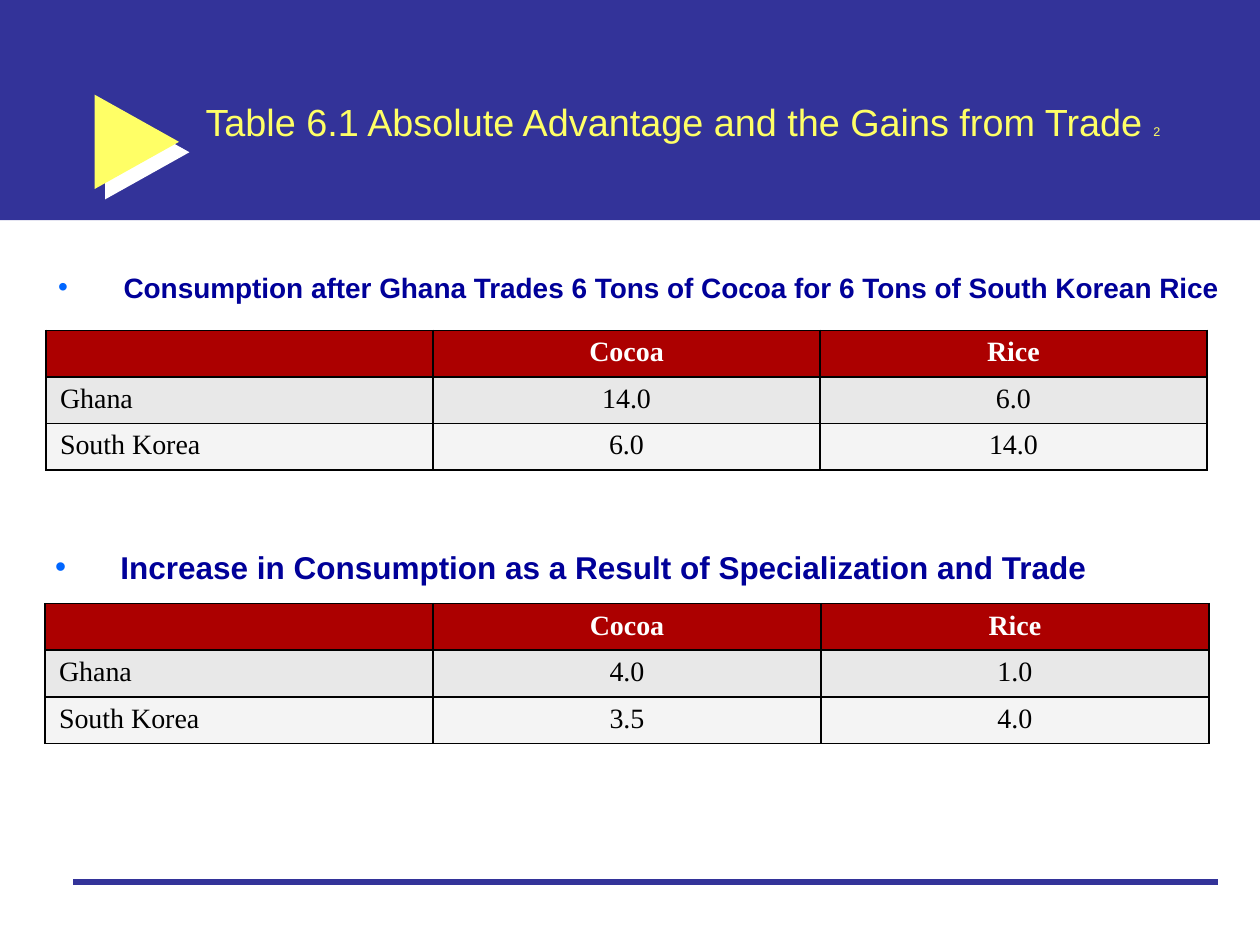
from lxml import etree
from pptx import Presentation
from pptx import util as u
from pptx.dml.color import RGBColor
from pptx.enum import shapes, text
from pptx.oxml import parse_xml
from pptx.oxml.ns import nsdecls, qn

NAVY, YELLOW, WHITE, BLACK = "333399", "FFFF66", "FFFFFF", "000000"


def paint(color_format, value):
    color_format.rgb = RGBColor.from_string(value)


def style(run, name, size, color, bold=False):
    run.font.name, run.font.size, run.font.bold = name, u.Pt(size), bold
    paint(run.font.color, color)


presentation = Presentation()
presentation.slide_width, presentation.slide_height = u.Cm(25.4), u.Cm(19.05)
slide = presentation.slides.add_slide(presentation.slide_layouts[5])

# Header band, and the yellow arrowhead over its white shadow
arrow = shapes.MSO_SHAPE.RIGHT_ARROW
for kind, left, top, width, height, color in [
    (shapes.MSO_SHAPE.RECTANGLE, 0, 0, 25.4, 4.44, NAVY),
    (arrow, 2.12, 2.12, 1.7, 1.9, WHITE),
    (arrow, 1.91, 1.91, 1.7, 1.9, YELLOW),
]:
    shape = slide.shapes.add_shape(kind, u.Cm(left), u.Cm(top), u.Cm(width), u.Cm(height))
    shape.shadow.inherit = False
    shape.fill.solid()
    paint(shape.fill.fore_color, color)
    shape.line.fill.background()
    if kind == arrow:
        shape.adjustments[0], shape.adjustments[1] = 0.38, 1

# Footer rule
rule = slide.shapes.add_connector(
    shapes.MSO_CONNECTOR.STRAIGHT, u.Cm(1.48), u.Cm(17.78), u.Cm(24.55), u.Cm(17.78))
paint(rule.line.color, NAVY)
rule.line.width = u.Pt(3)
etree.SubElement(rule._element.spPr, qn("a:effectLst"))

# Title, brought in front of the band
title = slide.shapes.title
title.left, title.top, title.width, title.height = u.Cm(3.89), u.Cm(1.73), u.Cm(20.55), u.Cm(1.44)
slide.shapes._spTree.append(title._element)
frame = title.text_frame
frame.auto_size = text.MSO_AUTO_SIZE.NONE
frame.vertical_anchor = text.MSO_ANCHOR.MIDDLE
paragraph = frame.paragraphs[0]
paragraph.alignment = text.PP_ALIGN.LEFT
for words, size in [("Table 6.1 Absolute Advantage and the Gains from Trade ", 21.6), ("2", 7.2)]:
    run = paragraph.add_run()
    run.text = words
    style(run, "Arial", size, YELLOW)

# Two sections: a bulleted heading and its table
sections = [
    ("Consumption after Ghana Trades 6 Tons of Cocoa for 6 Tons of South Korean Rice",
     16, text.PP_ALIGN.CENTER, (0.84, 5.33, 24.08), (0.93, 6.66, 7.8),
     [("Ghana", "14.0", "6.0"), ("South Korea", "6.0", "14.0")]),
    ("Increase in Consumption as a Result of Specialization and Trade",
     18, text.PP_ALIGN.LEFT, (0.86, 10.92, 23.75), (0.91, 12.17, 7.82),
     [("Ghana", "4.0", "1.0"), ("South Korea", "3.5", "4.0")]),
]
row_fills = ["AC0000", "E8E8E8", "F4F4F4"]
row_height = 0.93

for heading, size, alignment, heading_place, table_place, rows in sections:
    # Heading
    left, top, width = heading_place
    box = slide.shapes.add_textbox(u.Cm(left), u.Cm(top), u.Cm(width), u.Cm(1.09))
    box.text_frame.word_wrap = True
    box.text_frame.text = heading
    paragraph = box.text_frame.paragraphs[0]
    paragraph.alignment = alignment
    properties = paragraph._p.get_or_add_pPr()
    properties.set("marL", str(u.Cm(1.32)))
    properties.set("indent", str(-u.Cm(1.32)))
    bullet_color = etree.SubElement(properties, qn("a:buClr"))
    etree.SubElement(bullet_color, qn("a:srgbClr"), val="0066FF")
    etree.SubElement(properties, qn("a:buFont"), typeface="Arial")
    etree.SubElement(properties, qn("a:buChar"), char="•")
    style(paragraph.runs[0], "Arial", size, "000099", True)

    # Table
    left, top, column_width = table_place
    data = [("", "Cocoa", "Rice")] + rows
    table = slide.shapes.add_table(
        3, 3, u.Cm(left), u.Cm(top), u.Cm(3 * column_width), u.Cm(3 * row_height)).table
    for column in table.columns:
        column.width = u.Cm(column_width)
    for r, values in enumerate(data):
        table.rows[r].height = u.Cm(row_height)
        for c, value in enumerate(values):
            cell = table.cell(r, c)
            cell.margin_left = cell.margin_right = u.Cm(0.28)
            cell.margin_top = cell.margin_bottom = u.Cm(0.13)
            for side in ("lnL", "lnR", "lnT", "lnB"):
                cell._tc.get_or_add_tcPr().append(parse_xml(
                    f'<a:{side} {nsdecls("a")} w="12700"><a:solidFill>'
                    f'<a:srgbClr val="{BLACK}"/></a:solidFill></a:{side}>'))
            cell.fill.solid()
            paint(cell.fill.fore_color, row_fills[r])
            cell.text_frame.text = value
            paragraph = cell.text_frame.paragraphs[0]
            paragraph.alignment = text.PP_ALIGN.CENTER if c else text.PP_ALIGN.LEFT
            # Keeps the empty corner cell as low as its row
            paragraph._p.get_or_add_endParaRPr().set("sz", "1600")
            for run in paragraph.runs:
                style(run, "Times New Roman", 16, BLACK if r else WHITE, r == 0)

presentation.save("out.pptx")
